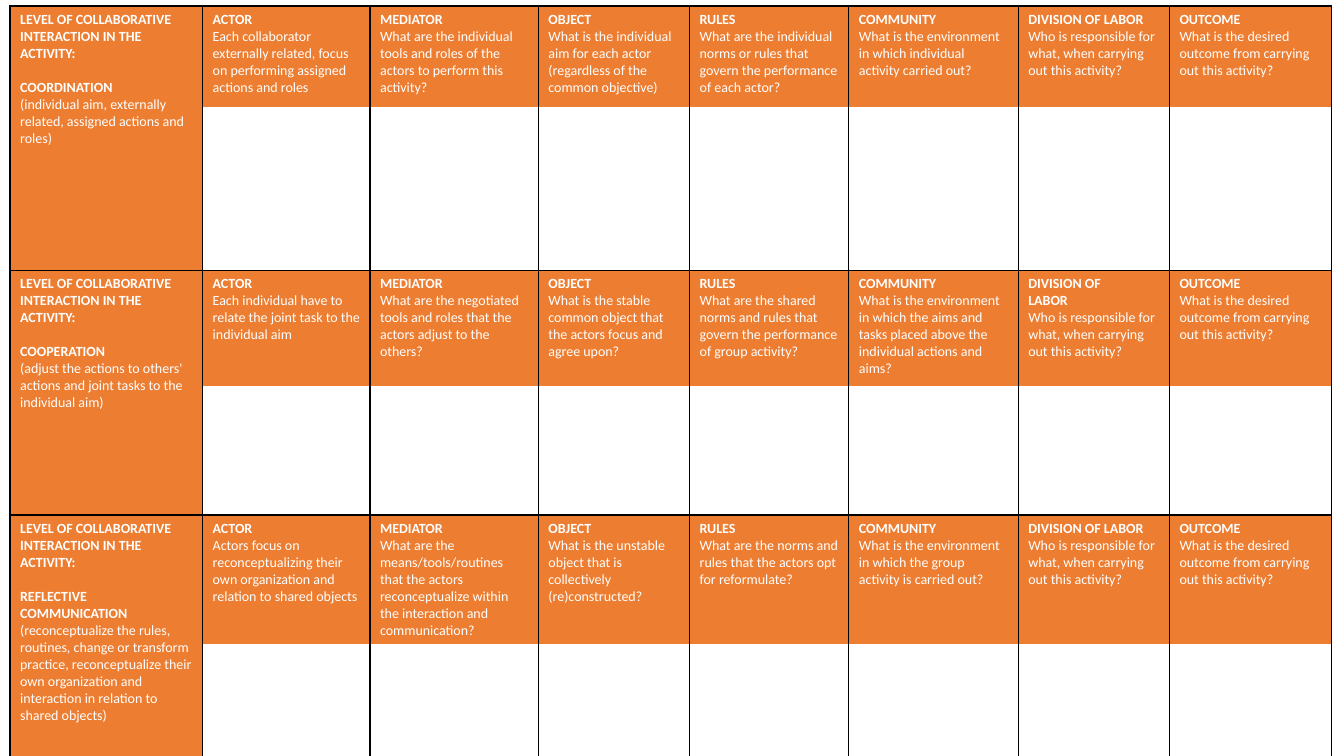
"""Build a slide with an activity-system table for three levels of collaborative interaction."""
import pptx
import pptx.dml.color
import pptx.oxml
import pptx.oxml.ns
import pptx.util
from dataclasses import dataclass
from lxml import etree

LEVEL = ["LEVEL OF COLLABORATIVE INTERACTION IN THE ACTIVITY:"]
HEADINGS = [["ACTOR"], ["MEDIATOR"], ["OBJECT"], ["RULES"], ["COMMUNITY"],
            ["DIVISION OF LABOR"], ["OUTCOME"]]
SPLIT_HEADINGS = HEADINGS[:5] + [["DIVISION OF ", "LABOR"]] + HEADINGS[6:]

BANDS = [
    (LEVEL, "COORDINATION",
     "(individual aim, externally related, assigned actions and roles)",
     HEADINGS, [
         "Each collaborator externally related, focus on performing assigned actions and roles",
         "What are the individual tools and roles of the actors to perform this activity?",
         "What is the individual aim for each actor (regardless of the common objective)",
         "What are the individual norms or rules that govern the performance of each actor? ",
         "What is the environment in which individual activity carried out?",
         "Who is responsible for what, when carrying out this activity?",
         "What is the desired outcome from carrying out this activity?",
     ]),
    (["LEVEL OF COLLABORATIVE ", "INTERACTION IN THE ", "ACTIVITY: "], "COOPERATION",
     "(adjust the actions to others' actions and joint tasks to the individual aim)",
     SPLIT_HEADINGS, [
         "Each individual have to relate the joint task to the individual aim",
         "What are the negotiated tools and roles that the actors adjust to the others?",
         "What is the stable common object that the actors focus and agree upon?",
         "What are the shared norms and rules that govern the performance of group activity?  ",
         "What is the environment in which the aims and tasks placed above the individual "
         "actions and aims? ",
         "Who is responsible for what, when carrying out this activity?",
         "What is the desired outcome from carrying out this activity?",
     ]),
    (LEVEL, "REFLECTIVE COMMUNICATION",
     "(reconceptualize the rules, routines, change or transform practice, reconceptualize "
     "their own organization and interaction in relation to shared objects)",
     HEADINGS, [
         "Actors focus on reconceptualizing their own organization and relation to shared objects",
         "What are the means/tools/routines that the actors reconceptualize within the "
         "interaction and communication?",
         "What is the unstable object that is collectively (re)constructed? ",
         "What are the norms and rules that the actors opt for reformulate?",
         "What is the environment in which the group activity is carried out?",
         "Who is responsible for what, when carrying out this activity?",
         "What is the desired outcome from carrying out this activity?",
     ]),
]

COL_WIDTHS = [1.91, 1.66, 1.67, 1.5, 1.58, 1.68, 1.5, 1.61]
ROW_HEIGHTS = [1, 1.62, 1.15, 1.28, 1.27, 1.42]
LEFT, TOP = 0.1, 0.06


@dataclass(frozen=True)
class Theme:
    """Colours, font and sizes."""
    accent: str = "ED7D31"
    paper: str = "FFFFFF"
    text: str = "FFFFFF"
    border: str = "000000"
    font: str = "Calibri"
    size: int = 10
    gap: float = 12.2
    line: int = 1


THEME = Theme()


def style_cell(cell, sides, fill):
    """Draw the given sides of a cell and fill it."""
    tc_pr = cell._tc.get_or_add_tcPr()
    for side in "LRTB":
        ln = etree.SubElement(tc_pr, pptx.oxml.ns.qn(f"a:ln{side}"))
        if side in sides:
            ln.set("w", str(pptx.util.Pt(THEME.line)))
            solid = etree.SubElement(ln, pptx.oxml.ns.qn("a:solidFill"))
            etree.SubElement(solid, pptx.oxml.ns.qn("a:srgbClr"), val=THEME.border)
        else:
            etree.SubElement(ln, pptx.oxml.ns.qn("a:noFill"))
    cell.fill.solid()
    cell.fill.fore_color.rgb = pptx.dml.color.RGBColor.from_string(fill)


def write_cell(cell, lines):
    """Write (text, bold, space before) paragraphs into a cell."""
    tf = cell.text_frame
    for i, (text, bold, gap) in enumerate(lines):
        p = tf.add_paragraph() if i else tf.paragraphs[0]
        p.space_before = pptx.util.Pt(gap)
        r = p.add_run()
        r.text = text
        r.font.name = THEME.font
        r.font.size = pptx.util.Pt(THEME.size)
        r.font.bold = bold
        r.font.color.rgb = pptx.dml.color.RGBColor.from_string(THEME.text)


def main():
    """Build and save the slide."""
    inches = pptx.util.Inches
    prs = pptx.Presentation()
    prs.slide_width, prs.slide_height = inches(13.33), inches(7.5)
    s = prs.slides.add_slide(prs.slide_layouts[6])
    frame = s.shapes.add_table(len(ROW_HEIGHTS), len(COL_WIDTHS), inches(LEFT), inches(TOP),
                               inches(sum(COL_WIDTHS)), inches(sum(ROW_HEIGHTS)))
    table = frame.table
    table.first_row = table.horz_banding = False
    for column, width in zip(table.columns, COL_WIDTHS):
        column.width = inches(width)
    for row, height in zip(table.rows, ROW_HEIGHTS):
        row.height = inches(height)

    for band, (level, name, detail, headings, questions) in enumerate(BANDS):
        top = 2 * band
        for c in range(len(COL_WIDTHS)):
            style_cell(table.cell(top, c), "LRT" if c else "LRTB", THEME.accent)
            style_cell(table.cell(top + 1, c), "LRB", THEME.paper if c else THEME.accent)
        table.cell(top, 0).merge(table.cell(top + 1, 0))
        write_cell(table.cell(top, 0), [(text, True, 0) for text in level]
                   + [(name, True, THEME.gap), (detail, False, 0)])
        for c, (heading, question) in enumerate(zip(headings, questions), 1):
            write_cell(table.cell(top, c),
                       [(text, True, 0) for text in heading] + [(question, False, 0)])
    prs.save("out.pptx")


if __name__ == "__main__":
    main()
